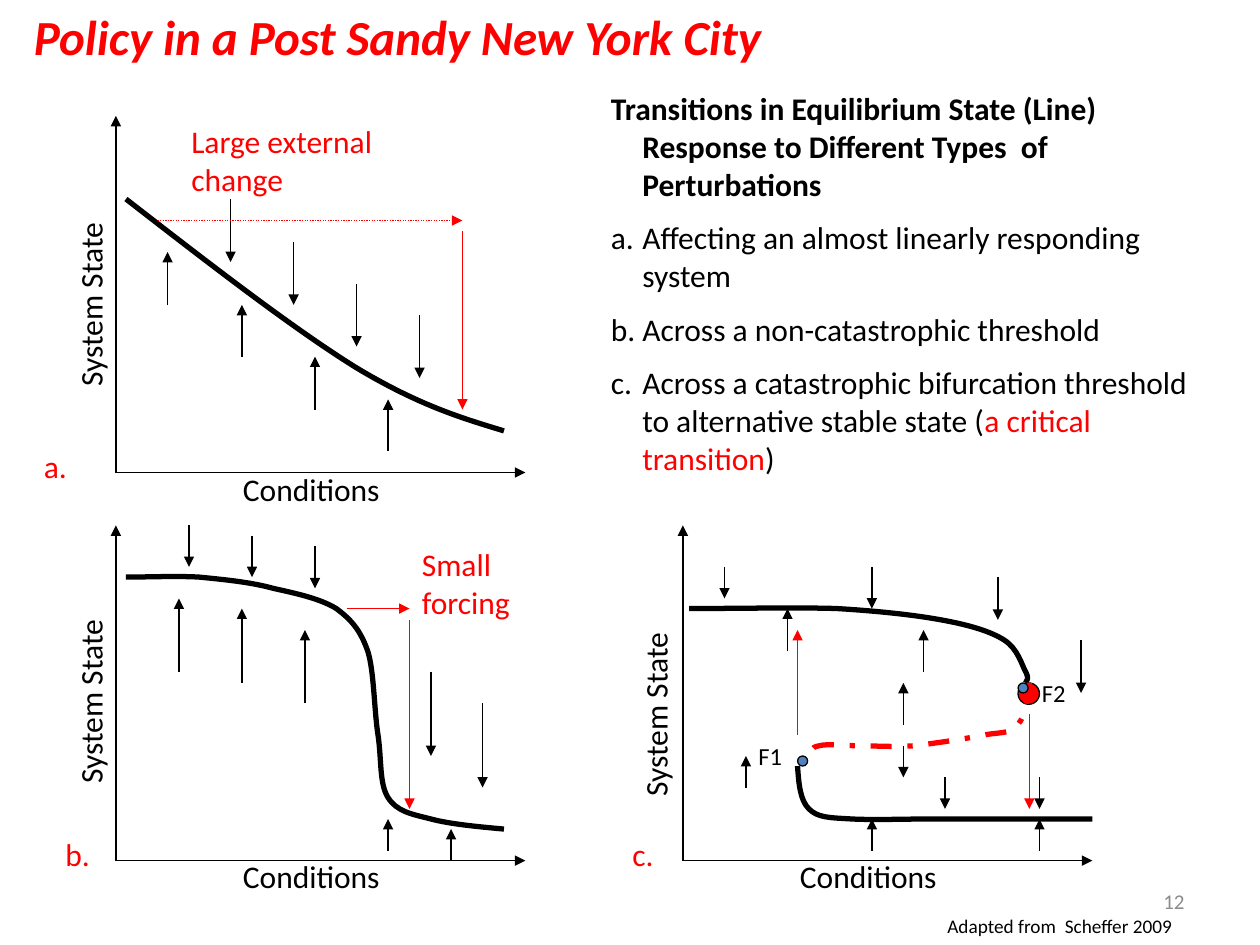
from dataclasses import dataclass

from lxml.etree import SubElement
from pptx import Presentation
from pptx.dml.color import RGBColor
from pptx.enum.dml import MSO_LINE_DASH_STYLE as DASH
from pptx.enum.shapes import MSO_CONNECTOR, MSO_SHAPE
from pptx.enum.text import MSO_ANCHOR, MSO_AUTO_SIZE, PP_ALIGN
from pptx.oxml.ns import qn
from pptx.util import Inches, Pt


@dataclass(frozen=True)
class Theme:
    font: str = "Calibri"
    black: RGBColor = RGBColor(0, 0, 0)
    red: RGBColor = RGBColor(0xFF, 0, 0)
    blue: RGBColor = RGBColor(0x4F, 0x81, 0xBD)
    gray: RGBColor = RGBColor(0x8C, 0x8C, 0x8C)
    title: int = 28
    body: int = 18
    point: int = 14
    number: int = 12
    source: int = 11
    thin: float = 0.75
    thick: float = 3


THEME = Theme()

# Each panel: axis origin, axis top, and the places of its three labels
PANELS = [
    dict(letter="a.", origin=(0.92, 3.75), top=0.92, letter_at=(0.25, 3.5),
         conditions=(1.83, 3.68, 1.58), state=(-0.41, 1.84, 2.25)),
    dict(letter="b.", origin=(0.92, 6.83), top=4.17, letter_at=(0.42, 6.58),
         conditions=(1.83, 6.75, 1.67), state=(-0.4, 5, 2.23)),
    dict(letter="c.", origin=(5.42, 6.83), top=4.17, letter_at=(4.92, 6.58),
         conditions=(6.25, 6.75, 1.58), state=(4.24, 5.26, 1.92)),
]
AXIS_LENGTH = 3.25

# Equilibrium lines: a start point, then three points for each Bezier piece
LINEAR = [(1, 1.58), (1.67, 2.1), (2.33, 2.61), (2.83, 2.92),
          (3.33, 3.22), (3.67, 3.32), (4, 3.42)]
THRESHOLD = [(1, 4.58), (1.19, 4.58), (1.39, 4.57), (1.58, 4.58),
             (1.78, 4.6), (1.99, 4.62), (2.17, 4.67),
             (2.35, 4.71), (2.54, 4.75), (2.67, 4.83),
             (2.79, 4.92), (2.86, 5), (2.92, 5.17),
             (2.97, 5.33), (2.97, 5.64), (3, 5.83),
             (3.03, 6.03), (3.01, 6.22), (3.08, 6.33),
             (3.15, 6.44), (3.26, 6.46), (3.42, 6.5),
             (3.57, 6.54), (3.78, 6.56), (4, 6.58)]
UPPER_BRANCH = [(5.47, 4.83), (5.89, 4.83), (6.31, 4.82), (6.64, 4.83),
                (6.97, 4.85), (7.25, 4.88), (7.47, 4.92),
                (7.69, 4.96), (7.86, 5.01), (7.97, 5.08),
                (8.08, 5.15), (8.11, 5.28), (8.14, 5.33),
                (8.17, 5.39), (8.15, 5.4), (8.14, 5.42)]
LOWER_BRANCH = [(6.33, 6.08), (6.34, 6.22), (6.35, 6.35), (6.42, 6.42),
                (6.49, 6.49), (6.58, 6.49), (6.75, 6.5),
                (6.92, 6.51), (7.22, 6.5), (7.42, 6.5),
                (7.75, 6.5), (8.29, 6.5), (8.67, 6.5)]
UNSTABLE_BRANCH = [(8.17, 5.42), (8.15, 5.55), (8.14, 5.68), (8.08, 5.75),
                   (8.03, 5.82), (7.97, 5.81), (7.83, 5.83),
                   (7.69, 5.86), (7.42, 5.9), (7.25, 5.92),
                   (7.08, 5.93), (6.96, 5.92), (6.83, 5.92),
                   (6.71, 5.92), (6.57, 5.9), (6.5, 5.92),
                   (6.43, 5.93), (6.44, 5.97), (6.42, 6),
                   (6.39, 6.03), (6.36, 6.06), (6.33, 6.08)]

# Vertical arrows towards equilibrium: x, start y, end y
FLOW_ARROWS = [
    # Panel a
    (1.33, 2.42, 2), (1.92, 2.83, 2.42), (2.5, 3.25, 2.83), (3.08, 3.58, 3.17),
    (1.83, 1.58, 2.08), (2.33, 1.92, 2.42), (2.83, 2.25, 2.75), (3.33, 2.5, 3),
    # Panel b
    (1.5, 4.17, 4.5), (2, 4.25, 4.58), (2.5, 4.33, 4.67),
    (1.42, 5.33, 4.75), (1.92, 5.42, 4.83), (2.42, 5.58, 5),
    (3.42, 5.33, 6), (3.83, 5.58, 6.25), (3.08, 6.75, 6.5), (3.58, 6.83, 6.58),
    # Panel c
    (5.75, 4.5, 4.75), (6.92, 4.5, 4.83), (7.92, 4.58, 4.92), (8.58, 5.08, 5.5),
    (6.25, 5.17, 4.83), (7.33, 5.33, 5), (7.17, 5.75, 5.42), (7.17, 5.92, 6.17),
    (5.92, 6.25, 6), (7.5, 6.17, 6.42), (8.25, 6.17, 6.42),
    (6.92, 6.75, 6.5), (8.25, 6.75, 6.5),
]
# Red arrows: start, end
CHANGE_ARROWS = [
    ((3.67, 1.83), (3.67, 3.25)),
    ((2.75, 4.83), (3.25, 4.83)), ((3.25, 4.92), (3.25, 6.42)),
    ((8.17, 5.67), (8.17, 6.42)), ((6.33, 5.83), (6.33, 5)),
]
BODY = [
    [("Transitions in Equilibrium State (Line)  Response to Different Types  of  Perturbations",
      THEME.black)],
    [("Affecting an almost linearly responding system", THEME.black)],
    [("Across a non-catastrophic threshold", THEME.black)],
    [("Across a catastrophic bifurcation threshold to alternative stable state (", THEME.black),
     ("a critical transition", THEME.red), (")", THEME.black)],
]


def style_run(run, size, color, bold=False, italic=False):
    font = run.font
    font.name, font.size = THEME.font, Pt(size)
    font.bold, font.italic = bold, italic
    font.color.rgb = color


def add_text_frame(slide, left, top, width, height):
    box = slide.shapes.add_textbox(*map(Inches, (left, top, width, height)))
    box.text_frame.word_wrap = True
    box.text_frame.auto_size = MSO_AUTO_SIZE.SHAPE_TO_FIT_TEXT
    return box


def add_label(slide, text, left, top, width, height=0.4, size=THEME.body,
              color=THEME.black, **style):
    box = add_text_frame(slide, left, top, width, height)
    box.text_frame.text = text
    style_run(box.text_frame.paragraphs[0].runs[0], size, color, **style)
    return box


def add_arrow(slide, start, end, color=THEME.black, dash=None):
    points = map(Inches, (*start, *end))
    arrow = slide.shapes.add_connector(MSO_CONNECTOR.STRAIGHT, *points)
    arrow.line.color.rgb = color
    arrow.line.width = Pt(THEME.thin)
    if dash:
        arrow.line.dash_style = dash
    SubElement(arrow.line._get_or_add_ln(), qn("a:tailEnd"), type="triangle")
    SubElement(arrow._element.spPr, qn("a:effectLst"))


def add_curve(slide, points, color=THEME.black, dash=None):
    start, *rest = [(Inches(x), Inches(y)) for x, y in points]
    builder = slide.shapes.build_freeform(*start)
    builder.add_line_segments(rest, close=False)
    curve = builder.convert_to_shape()
    # Join every three straight segments into one Bezier piece
    outline = next(curve._element.iter(qn("a:path")))
    for index, segment in enumerate(outline.findall(qn("a:lnTo"))):
        if index % 3 == 0:
            bezier = SubElement(outline, qn("a:cubicBezTo"))
        bezier.append(segment[0])
        outline.remove(segment)
    curve.shadow.inherit = False
    curve.fill.background()
    curve.line.color.rgb = color
    curve.line.width = Pt(THEME.thick)
    if dash:
        curve.line.dash_style = dash


def add_dot(slide, left, top, diameter, color):
    dot = slide.shapes.add_shape(
        MSO_SHAPE.OVAL, *map(Inches, (left, top, diameter, diameter)))
    dot.shadow.inherit = False
    dot.fill.solid()
    dot.fill.fore_color.rgb = color
    dot.line.color.rgb = THEME.black
    dot.line.width = Pt(THEME.thin)


def add_panel(slide, letter, origin, top, letter_at, conditions, state):
    x, y = origin
    add_arrow(slide, origin, (x + AXIS_LENGTH, y))
    add_arrow(slide, origin, (x, top))
    add_label(slide, "Conditions", *conditions)
    add_label(slide, "System State", *state).rotation = 270
    add_label(slide, letter, *letter_at, 0.5, color=THEME.red)


def add_body(slide):
    text_frame = add_text_frame(slide, 4.75, 0.66, 5, 3.26).text_frame
    for index, parts in enumerate(BODY):
        paragraph = text_frame.add_paragraph() if index else text_frame.paragraphs[0]
        for text, color in parts:
            run = paragraph.add_run()
            run.text = text
            style_run(run, THEME.body, color, bold=index == 0)
        properties = paragraph._p.get_or_add_pPr()
        properties.set("marL", str(Inches(0.25)))
        properties.set("indent", str(Inches(-0.25)))
        if index:
            paragraph.space_before = Pt(THEME.body / 2)
            SubElement(properties, qn("a:buAutoNum"), type="alphaLcPeriod")


def main():
    presentation = Presentation()
    presentation.slide_width, presentation.slide_height = Inches(10), Inches(7.5)
    slide = presentation.slides.add_slide(presentation.slide_layouts[6])

    # Axes and equilibrium lines
    add_dot(slide, 8.08, 5.42, 0.17, THEME.red)
    for panel in PANELS:
        add_panel(slide, **panel)
    for points in (LINEAR, THRESHOLD, UPPER_BRANCH, LOWER_BRANCH):
        add_curve(slide, points)
    add_curve(slide, UNSTABLE_BRANCH, THEME.red, DASH.DASH_DOT)

    # Bifurcation points
    for name, dot_at, label_at in (("F2", (8.08, 5.42), (8.17, 5.33, 0.58)),
                                   ("F1", (6.33, 6), (5.92, 5.83, 0.5))):
        add_dot(slide, *dot_at, 0.08, THEME.blue)
        add_label(slide, name, *label_at, 0.33, THEME.point)

    # Arrows and their captions
    for x, start, end in FLOW_ARROWS:
        add_arrow(slide, (x, start), (x, end))
    add_arrow(slide, (1.25, 1.75), (3.67, 1.75), THEME.red, DASH.ROUND_DOT)
    for start, end in CHANGE_ARROWS:
        add_arrow(slide, start, end, THEME.red)
    add_label(slide, "Large external change", 1.42, 0.92, 2.17, 0.3, color=THEME.red)
    add_label(slide, "Small forcing", 3.25, 4.28, 1.25, 0.3, color=THEME.red)

    # Title, explanation and footer
    add_label(slide, "Policy in a Post Sandy New York City", 0.17, 0, 6.58, 0.57,
              THEME.title, THEME.red, bold=True, italic=True)
    add_body(slide)
    add_label(slide, "Adapted from  Scheffer 2009", 7.42, 7.21, 2.46, 0.29, THEME.source)
    number = add_label(slide, "12", 7.17, 6.95, 2.33, 0.4, THEME.number, THEME.gray)
    number.text_frame.auto_size = MSO_AUTO_SIZE.NONE
    number.text_frame.vertical_anchor = MSO_ANCHOR.MIDDLE
    number.text_frame.paragraphs[0].alignment = PP_ALIGN.RIGHT

    presentation.save("out.pptx")


if __name__ == "__main__":
    main()
